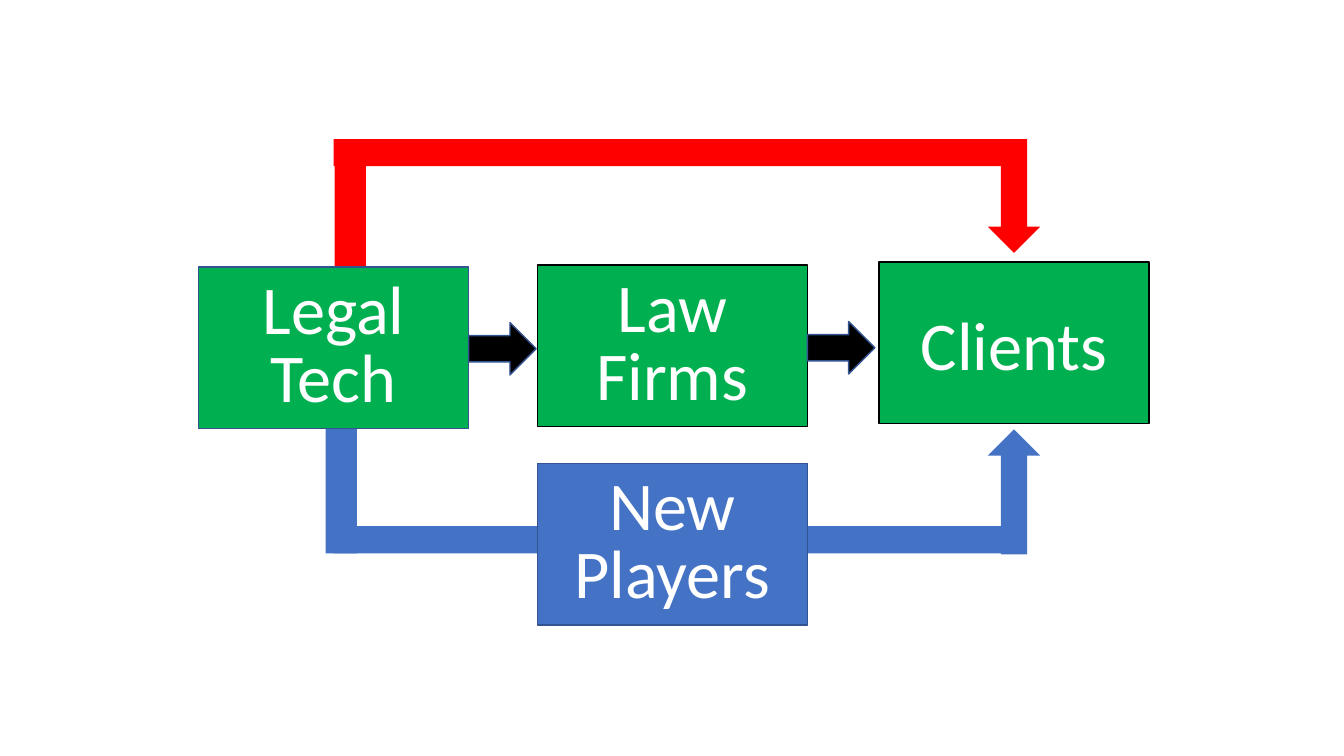
from pptx import Presentation
from pptx.dml.color import RGBColor
from pptx.enum.shapes import MSO_SHAPE
from pptx.enum.text import MSO_ANCHOR, PP_ALIGN
from pptx.util import Emu, Pt

SCALE = 9144
GREEN, BLUE, RED = "00B050", "4472C4", "FF0000"
BLACK, WHITE, NAVY = "000000", "FFFFFF", "325491"
BOX_WIDTH, BOX_HEIGHT = 268, 160
ARROW_BREADTH = 52
TEXT_SIZE = Pt(48.8)


def px(length):
    return Emu(length * SCALE)


def color(value):
    return RGBColor.from_string(value)


def add_block(slide, kind, left, top, width, height, fill, line=None):
    shape = slide.shapes.add_shape(kind, px(left), px(top), px(width), px(height))
    shape.shadow.inherit = False
    shape.fill.solid()
    shape.fill.fore_color.rgb = color(fill)
    if line:
        shape.line.color.rgb = color(line)
        shape.line.width = Pt(1)
    else:
        shape.line.fill.background()
    return shape


def add_bar(slide, left, top, width, height, fill):
    add_block(slide, MSO_SHAPE.RECTANGLE, left, top, width, height, fill)


def add_box(slide, text, left, top, fill, line, spacing=TEXT_SIZE):
    shape = add_block(slide, MSO_SHAPE.RECTANGLE, left, top, BOX_WIDTH, BOX_HEIGHT, fill, line)
    text_frame = shape.text_frame
    text_frame.word_wrap = True
    text_frame.vertical_anchor = MSO_ANCHOR.MIDDLE
    text_frame.margin_left = text_frame.margin_right = px(8)
    text_frame.margin_top = text_frame.margin_bottom = px(4)
    text_frame.text = text
    for paragraph in text_frame.paragraphs:
        paragraph.alignment = PP_ALIGN.CENTER
        paragraph.line_spacing = spacing
        for run in paragraph.runs:
            run.font.name = "Calibri"
            run.font.size = TEXT_SIZE
            run.font.color.rgb = color(WHITE)


def add_step_arrow(slide, left, top):
    add_block(slide, MSO_SHAPE.RIGHT_ARROW, left, top, 67, ARROW_BREADTH, BLACK, NAVY)


def main():
    presentation = Presentation()
    presentation.slide_width = Emu(12192000)
    presentation.slide_height = px(750)
    slide = presentation.slides.add_slide(presentation.slide_layouts[6])

    add_block(slide, MSO_SHAPE.UP_ARROW, 980, 426, ARROW_BREADTH, 124, BLUE)
    add_bar(slide, 331, 522, 685, 27, BLUE)
    add_bar(slide, 323, 418, 31, 131, BLUE)
    add_bar(slide, 332, 157, 31, 131, RED)

    add_box(slide, "Clients", 872, 260, GREEN, BLACK, None)
    add_box(slide, "Law Firms", 533, 263, GREEN, BLACK)
    add_box(slide, "Legal\nTech", 197, 265, GREEN, NAVY)
    add_step_arrow(slide, 465, 320)
    add_step_arrow(slide, 801, 319)

    add_block(slide, MSO_SHAPE.DOWN_ARROW, 980, 138, ARROW_BREADTH, 113, RED)
    add_bar(slide, 331, 138, 685, 27, RED)
    add_box(slide, "New Players", 533, 460, BLUE, NAVY)

    presentation.save("out.pptx")


if __name__ == "__main__":
    main()
